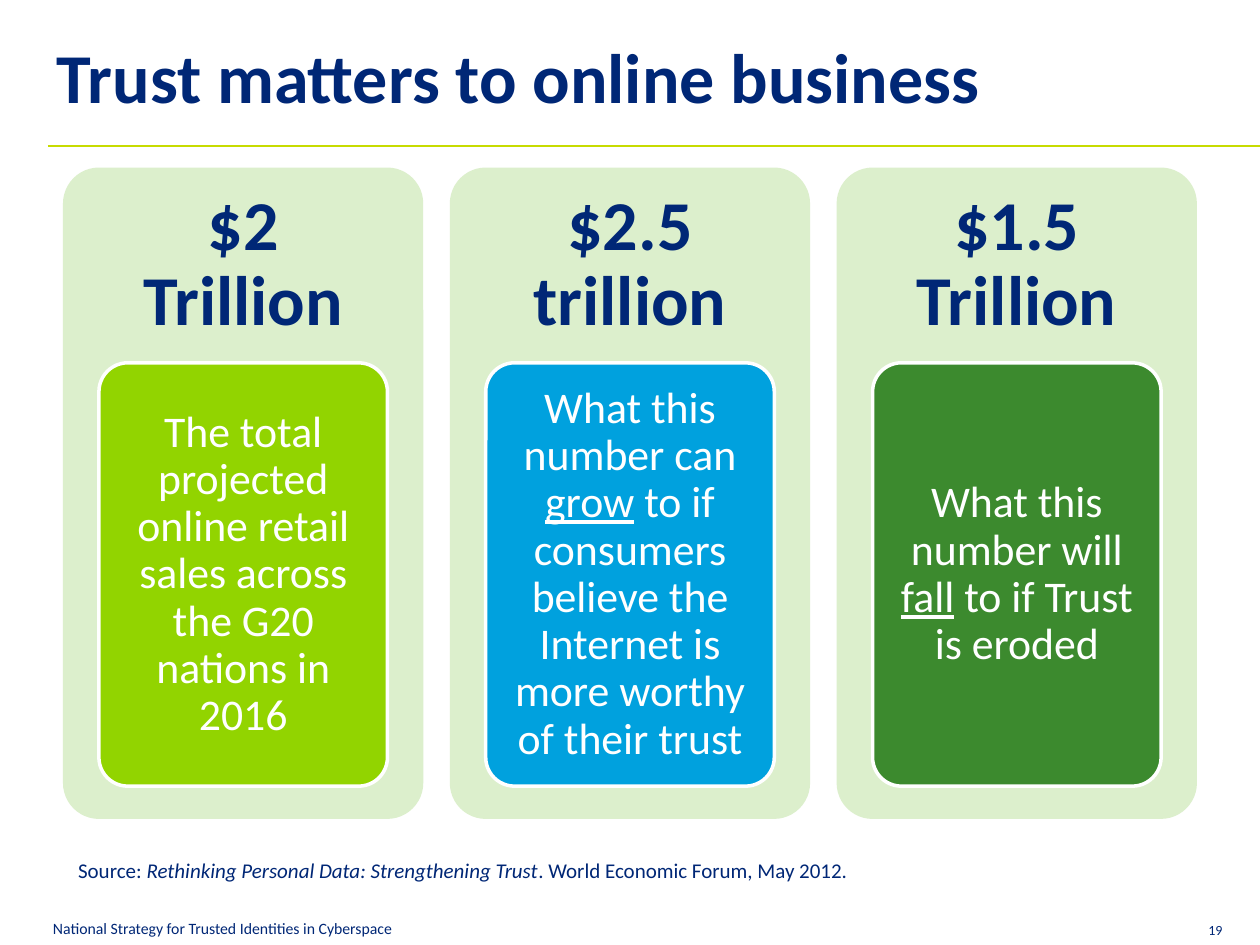
from dataclasses import dataclass

from lxml.etree import SubElement
from pptx import Presentation
from pptx.dml.color import RGBColor
from pptx.enum.shapes import MSO_CONNECTOR, MSO_SHAPE
from pptx.enum.text import MSO_ANCHOR as Anchor, PP_ALIGN as Align
from pptx.oxml.ns import qn
from pptx.slide import Slide
from pptx.util import Inches, Pt

NAVY = RGBColor(0x00, 0x27, 0x76)
WHITE = RGBColor(0xFF, 0xFF, 0xFF)
PALE_GREEN = RGBColor(0xDC, 0xEF, 0xCC)
LIME = RGBColor(0x92, 0xD4, 0x00)
BLUE = RGBColor(0x00, 0xA1, 0xDE)
GREEN = RGBColor(0x3C, 0x8A, 0x2E)
RULE_COLOR = RGBColor(0xC7, 0xDB, 0x00)

CARD_LEFT, CARD_TOP = 0.5, 1.33
CARD_WIDTH, CARD_HEIGHT = 2.86, 5.17
CARD_PITCH = 3.07
HEADING_HEIGHT = 1.55
BOX_WIDTH, BOX_HEIGHT = 2.29, 3.36
BOX_PADDING = 0.07


@dataclass(frozen=True)
class Box:
    left: float
    top: float
    width: float
    height: float

    def lengths(self) -> list[Inches]:
        return [Inches(n) for n in (self.left, self.top, self.width, self.height)]

    def inset(self, padding: float) -> "Box":
        return Box(self.left + padding, self.top + padding,
                   self.width - 2 * padding, self.height - 2 * padding)


@dataclass(frozen=True)
class Run:
    text: str
    underline: bool = False
    italic: bool = False


@dataclass(frozen=True)
class Card:
    heading: str
    runs: tuple[Run, ...]
    color: RGBColor


CARDS = (
    Card("$2\vTrillion",
         (Run("The total projected online retail sales across the G20 nations in 2016"),),
         LIME),
    Card("$2.5 trillion",
         (Run("What this number can "), Run("grow", underline=True),
          Run(" to if consumers believe the Internet is more worthy of their trust")),
         BLUE),
    Card("$1.5 Trillion",
         (Run("What this number will "), Run("fall", underline=True),
          Run(" to if Trust is eroded")),
         GREEN),
)


def add_text(slide: Slide, box: Box, runs: tuple[Run, ...], size: float,
             color: RGBColor = NAVY, bold: bool = False,
             align: Align = Align.LEFT, anchor: Anchor = Anchor.TOP,
             margins: tuple[float, float] = (0, 0),
             spacing: float | Pt | None = None) -> None:
    """Add one paragraph; margins are the horizontal and vertical insets."""
    frame = slide.shapes.add_textbox(*box.lengths()).text_frame
    frame.word_wrap = True
    frame.vertical_anchor = anchor
    frame.margin_left = frame.margin_right = Inches(margins[0])
    frame.margin_top = frame.margin_bottom = Inches(margins[1])
    paragraph = frame.paragraphs[0]
    paragraph.alignment = align
    paragraph.line_spacing = spacing
    for index, part in enumerate(runs):
        if index == 0 and "\v" in part.text:
            paragraph.text = part.text
            text_runs = paragraph.runs
        else:
            text_runs = [paragraph.add_run()]
            text_runs[0].text = part.text
        for run in text_runs:
            font = run.font
            font.name = "Calibri"
            font.size = Pt(size)
            font.bold = bold
            font.color.rgb = color
            font.underline = part.underline
            font.italic = part.italic


def add_rounded(slide: Slide, box: Box, fill: RGBColor, outlined: bool = False) -> None:
    shape = slide.shapes.add_shape(MSO_SHAPE.ROUNDED_RECTANGLE, *box.lengths())
    shape.adjustments[0] = 0.1
    shape.shadow.inherit = False
    shape.fill.solid()
    shape.fill.fore_color.rgb = fill
    if outlined:
        shape.line.color.rgb = WHITE
        shape.line.width = Pt(2)
    else:
        shape.line.fill.background()


def add_card(slide: Slide, card: Card, left: float) -> None:
    add_rounded(slide, Box(left, CARD_TOP, CARD_WIDTH, CARD_HEIGHT), PALE_GREEN)
    add_text(slide, Box(left, CARD_TOP, CARD_WIDTH, HEADING_HEIGHT),
             (Run(card.heading),), 40, bold=True, align=Align.CENTER,
             anchor=Anchor.MIDDLE, margins=(0.17, 0.17), spacing=0.9)
    box = Box(left + (CARD_WIDTH - BOX_WIDTH) / 2, CARD_TOP + HEADING_HEIGHT,
              BOX_WIDTH, BOX_HEIGHT)
    add_rounded(slide, box, card.color, outlined=True)
    add_text(slide, box.inset(BOX_PADDING), card.runs, 25, color=WHITE,
             align=Align.CENTER, anchor=Anchor.MIDDLE,
             margins=(0.07, 0.05), spacing=0.9)


def add_title_rule(slide: Slide) -> None:
    rule = slide.shapes.add_connector(MSO_CONNECTOR.STRAIGHT, Inches(0.38),
                                      Inches(1.16), Inches(10), Inches(1.16))
    rule.line.color.rgb = RULE_COLOR
    rule.line.width = Pt(0.75)
    SubElement(rule._element.spPr, qn("a:effectLst"))


def main() -> None:
    presentation = Presentation()
    presentation.slide_width = Inches(10)
    presentation.slide_height = Inches(7.5)
    slide = presentation.slides.add_slide(presentation.slide_layouts[6])

    add_text(slide, Box(9.59, 7.32, 0.29, 0.13), (Run("19"),), 8, anchor=Anchor.BOTTOM)
    add_text(slide, Box(0.42, 7.29, 4.72, 0.15),
             (Run("National Strategy for Trusted Identities in Cyberspace"),),
             9, anchor=Anchor.BOTTOM)
    for index, card in enumerate(CARDS):
        add_card(slide, card, CARD_LEFT + index * CARD_PITCH)
    add_text(slide, Box(0.45, 0.52, 9.11, 0.46),
             (Run("Trust matters to online business"),), 40, bold=True, spacing=Pt(30))
    add_title_rule(slide)
    add_text(slide, Box(0.33, 6.79, 9, 0.3),
             (Run("Source: "),
              Run("Rethinking Personal Data: Strengthening Trust", italic=True),
              Run(". World Economic Forum, May 2012.")),
             12, margins=(0.29, 0.04), spacing=0.9)

    presentation.save("out.pptx")


if __name__ == "__main__":
    main()
